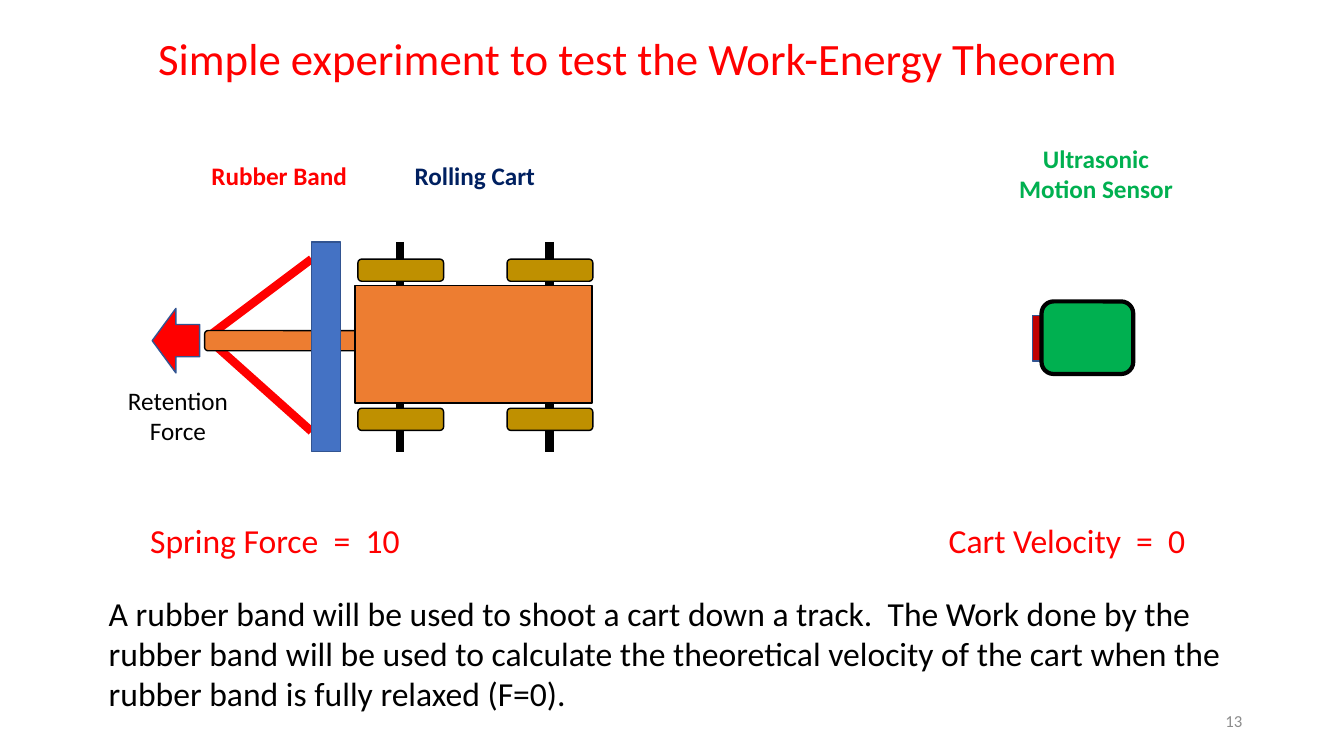
from lxml import etree
from pptx import Presentation
from pptx.dml.color import RGBColor
from pptx.enum.shapes import MSO_CONNECTOR, MSO_SHAPE
from pptx.enum.text import MSO_ANCHOR, PP_ALIGN
from pptx.oxml.ns import qn
from pptx.util import Pt

PX = 9144  # one px is a hundredth of an inch
FONT = "Calibri"
STRAIGHT = MSO_CONNECTOR.STRAIGHT
RECTANGLE = MSO_SHAPE.RECTANGLE
ROUNDED = MSO_SHAPE.ROUNDED_RECTANGLE
LEFT_ARROW = MSO_SHAPE.LEFT_ARROW
LEFT, CENTER, RIGHT = PP_ALIGN.LEFT, PP_ALIGN.CENTER, PP_ALIGN.RIGHT
TOP, MIDDLE = MSO_ANCHOR.TOP, MSO_ANCHOR.MIDDLE

COLORS = {
    "black": "000000",
    "red": "FF0000",
    "dark red": "C00000",
    "orange": "ED7D31",
    "blue": "4472C4",
    "outline": "325491",
    "navy": "002060",
    "gold": "BF9000",
    "green": "00B050",
    "gray": "8C8C8C",
}


def color(name):
    return RGBColor.from_string(COLORS[name])


def scale(*lengths):
    return [length * PX for length in lengths]


def add_line(slide, start, end, line_color):
    line = slide.shapes.add_connector(STRAIGHT, *scale(*start, *end))
    line.line.color.rgb = color(line_color)
    line.line.width = Pt(6)
    etree.SubElement(line._element.spPr, qn("a:effectLst"))


def add_part(slide, kind, box, fill, outline="black", width=1):
    shape = slide.shapes.add_shape(kind, *scale(*box))
    shape.shadow.inherit = False
    shape.fill.solid()
    shape.fill.fore_color.rgb = color(fill)
    shape.line.color.rgb = color(outline)
    shape.line.width = Pt(width)


def add_label(slide, box, text, size, text_color, align=LEFT, bold=False, anchor=TOP):
    frame = slide.shapes.add_textbox(*scale(*box)).text_frame
    frame.word_wrap = True
    frame.vertical_anchor = anchor
    paragraph = frame.paragraphs[0]
    paragraph.alignment = align
    run = paragraph.add_run()
    run.text = text
    run.font.name = FONT
    run.font.size = Pt(size)
    run.font.bold = bold
    run.font.color.rgb = color(text_color)


def add_cart(slide):
    # Axles
    for axle_x in (545, 397):
        add_line(slide, (axle_x, 240), (axle_x, 448), "black")

    # Rubber band, stretched from the post to the tip of the rod
    for post_y in (257, 428):
        add_line(slide, (309, post_y), (205, 335), "red")

    # Rod, post and body
    add_part(slide, ROUNDED, (203, 328, 166, 20), "orange")
    add_part(slide, RECTANGLE, (309, 240, 29, 208), "blue", "outline")
    add_part(slide, RECTANGLE, (352, 283, 235, 117), "orange")

    # Wheels
    for wheel_y in (257, 405):
        for wheel_x in (355, 503):
            add_part(slide, ROUNDED, (wheel_x, wheel_y, 85, 22), "gold")

    # Retention force
    add_part(slide, LEFT_ARROW, (151, 306, 47, 64), "red", "outline")


def add_sensor(slide):
    add_part(slide, RECTANGLE, (1024, 313, 9, 45), "dark red", "outline")
    add_part(slide, ROUNDED, (1033, 299, 91, 72), "green", width=3)


def main():
    presentation = Presentation()
    presentation.slide_width, presentation.slide_height = scale(1333, 750)
    slide = presentation.slides.add_slide(presentation.slide_layouts[6])

    # Title
    add_label(slide, (147, 26, 1040, 64),
              "Simple experiment to test the Work-Energy Theorem", 32, "red")

    add_cart(slide)
    add_sensor(slide)

    # Names of the parts
    add_label(slide, (177, 154, 200, 40), "Rubber Band", 18, "red", CENTER, True)
    add_label(slide, (371, 154, 200, 40), "Rolling Cart", 18, "navy", CENTER, True)
    add_label(slide, (987, 137, 200, 71), "Ultrasonic Motion Sensor", 18, "green", CENTER, True)
    add_label(slide, (115, 377, 123, 71), "Retention Force", 18, "black", CENTER)

    # Readings
    add_label(slide, (139, 511, 295, 50), "Spring Force  =  10", 24, "red")
    add_label(slide, (931, 511, 295, 50), "Cart Velocity  =  0", 24, "red")

    # Explanation and slide number
    add_label(slide, (98, 583, 1143, 131),
              "A rubber band will be used to shoot a cart down a track.  The Work done "
              "by the rubber band will be used to calculate the theoretical velocity of "
              "the cart when the rubber band is fully relaxed (F=0).", 24, "black")
    add_label(slide, (942, 695, 300, 40), "13", 12, "gray", RIGHT, anchor=MIDDLE)

    presentation.save("out.pptx")


if __name__ == "__main__":
    main()
